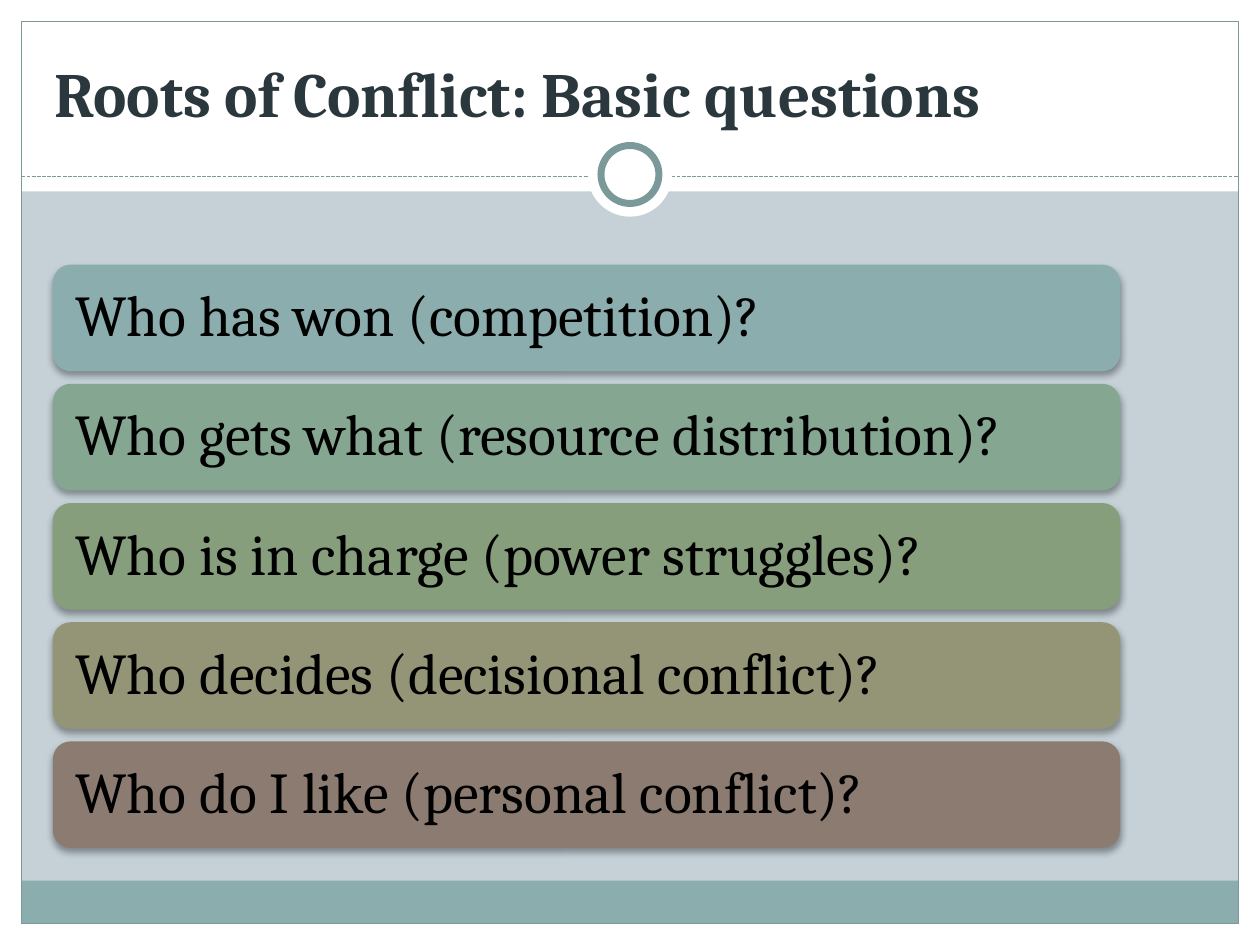
from dataclasses import dataclass

from lxml import etree
from pptx import Presentation
from pptx import util as u
from pptx.dml.color import RGBColor
from pptx.enum import dml, shapes, text
from pptx.oxml import ns

Inches = u.Inches


@dataclass(frozen=True)
class Theme:
    """Colours and type sizes of the deck."""
    font: str = "Cambria"
    title_size: int = 36
    question_size: int = 33
    background: str = "C5D1D7"
    paper: str = "FFFFFF"
    band: str = "8CADAE"
    rule: str = "7C999A"
    title: str = "2A373D"
    ink: str = "000000"
    cards: tuple = ("8CADAE", "85A691", "879E7D", "949576", "8C7B70")


@dataclass(frozen=True)
class Box:
    """A rectangle in inches."""
    left: float
    top: float
    width: float
    height: float

    def emu(self):
        """Return the four lengths as slide units."""
        return [Inches(n) for n in (self.left, self.top, self.width, self.height)]


THEME = Theme()
SHAPE = shapes.MSO_SHAPE
QUESTIONS = (
    "Who has won (competition)?",
    "Who gets what (resource distribution)?",
    "Who is in charge (power struggles)?",
    "Who decides (decisional conflict)?",
    "Who do I like (personal conflict)?",
)


def add_plain(page, kind, box, fill=None, line=None, weight=0.75):
    """Add a flat preset shape with an optional fill and outline."""
    shape = page.shapes.add_shape(kind, *box.emu())
    shape.shadow.inherit = False
    if fill:
        shape.fill.solid()
        shape.fill.fore_color.rgb = RGBColor.from_string(fill)
    else:
        shape.fill.background()
    if line:
        shape.line.color.rgb = RGBColor.from_string(line)
        shape.line.width = u.Pt(weight)
    else:
        shape.line.fill.background()
    return shape


def style_text(frame, size, colour, bold=False):
    """Format every run of a text frame, aligned left."""
    for para in frame.paragraphs:
        para.alignment = text.PP_ALIGN.LEFT
        for span in para.runs:
            span.font.name = THEME.font
            span.font.size = u.Pt(size)
            span.font.bold = bold
            span.font.color.rgb = RGBColor.from_string(colour)


def add_soft_shadow(shape):
    """Give a shape a soft shadow that falls straight down."""
    effects = shape._element.spPr.find(ns.qn("a:effectLst"))
    shadow = etree.SubElement(effects, ns.qn("a:outerShdw"), blurRad=str(u.Pt(4)),
                              dist=str(u.Pt(2)), dir="5400000", rotWithShape="0")
    colour = etree.SubElement(shadow, ns.qn("a:srgbClr"), val=THEME.ink)
    etree.SubElement(colour, ns.qn("a:alpha"), val="35000")


def add_frame(page, box, margin, header, footer):
    """Draw the white margins, footer band and outline of the page."""
    right, bottom = box.width - margin, box.height - margin
    for edge in (
        Box(0, bottom, box.width, margin),
        Box(0, 0, box.width, header),
        Box(0, 0, margin, box.height),
        Box(right, 0, margin, box.height),
    ):
        add_plain(page, SHAPE.RECTANGLE, edge, THEME.paper)
    inner = Box(margin, margin, right - margin, bottom - margin)
    add_plain(page, SHAPE.RECTANGLE,
              Box(margin, bottom - footer, inner.width, footer), THEME.band)
    add_plain(page, SHAPE.RECTANGLE, inner, line=THEME.rule)


def add_divider(page, box):
    """Draw a dashed rule with a ring at the middle of its box."""
    rule_y = Inches(box.top + 0.35)
    rule = page.shapes.add_connector(
        shapes.MSO_CONNECTOR.STRAIGHT, Inches(box.left), rule_y,
        Inches(box.left + box.width), rule_y)
    rule.line.color.rgb = RGBColor.from_string(THEME.rule)
    rule.line.width = u.Pt(0.75)
    rule.line.dash_style = dml.MSO_LINE.SQUARE_DOT
    etree.SubElement(rule._element.spPr, ns.qn("a:effectLst"))
    centre_x, centre_y = box.left + box.width / 2, box.top + box.height / 2
    for size, line in ((box.height, None), (0.46, THEME.rule)):
        ring = Box(centre_x - size / 2, centre_y - size / 2, size, size)
        add_plain(page, SHAPE.OVAL, ring, THEME.paper, line, weight=4)


def place_title(page, box, wording):
    """Fill the title placeholder and bring it in front of the frame."""
    title = page.shapes.title
    title.left, title.top, title.width, title.height = box.emu()
    frame = title.text_frame
    frame.text = wording
    frame.auto_size = text.MSO_AUTO_SIZE.NONE
    frame.vertical_anchor = text.MSO_ANCHOR.BOTTOM
    style_text(frame, THEME.title_size, THEME.title, bold=True)
    page.shapes._spTree.append(title._element)


def add_questions(page, box, questions, gap):
    """Stack one rounded card per question, evenly spaced in the box."""
    height = (box.height + gap) / len(questions) - gap
    for index, (question, colour) in enumerate(zip(questions, THEME.cards)):
        top = box.top + index * (height + gap)
        card = add_plain(page, SHAPE.ROUNDED_RECTANGLE,
                         Box(box.left, top, box.width, height), colour)
        add_soft_shadow(card)
        frame = card.text_frame
        frame.text = question
        frame.word_wrap = True
        frame.vertical_anchor = text.MSO_ANCHOR.MIDDLE
        frame.margin_left = frame.margin_right = Inches(0.14)
        frame.margin_top = frame.margin_bottom = Inches(0.14)
        frame.paragraphs[0].line_spacing = 0.9
        style_text(frame, THEME.question_size, THEME.ink)


def build_page(deck, box):
    """Compose the questions slide within the given page box."""
    page = deck.slides.add_slide(deck.slide_layouts[5])
    page.background.fill.solid()
    page.background.fill.fore_color.rgb = RGBColor.from_string(THEME.background)
    add_frame(page, box, margin=0.17, header=1.52, footer=0.34)
    add_divider(page, Box(0.17, 1.05, 9.66, 0.67))
    place_title(page, Box(0.33, 0.25, 9.33, 0.83), "Roots of Conflict: Basic questions")
    add_questions(page, Box(0.42, 2.1, 8.47, 4.63), QUESTIONS, gap=0.1)


def main():
    """Build and save the deck."""
    deck = Presentation()
    deck.slide_width, deck.slide_height = Inches(10), Inches(7.5)
    build_page(deck, Box(0, 0, 10, 7.5))
    deck.save("out.pptx")


if __name__ == "__main__":
    main()
